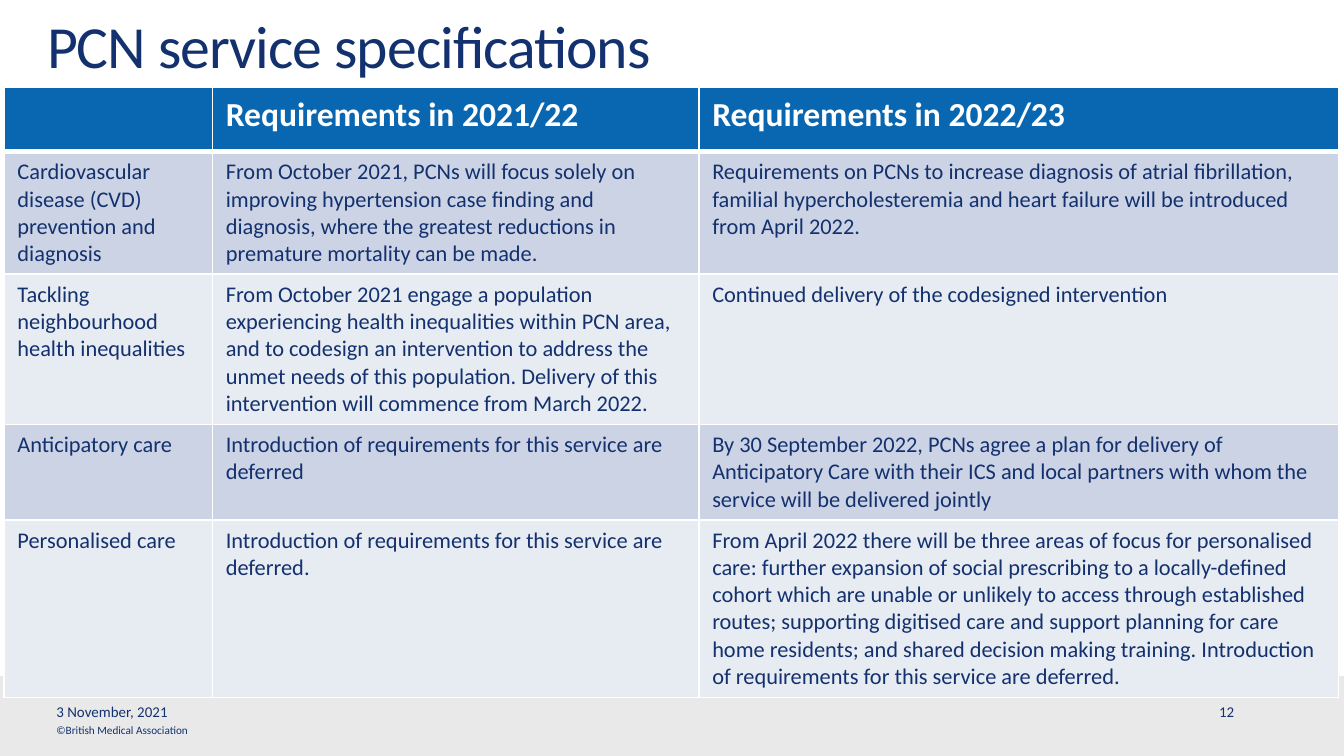
from lxml import etree
from pptx import Presentation
from pptx.dml.color import RGBColor
from pptx.enum.shapes import MSO_SHAPE
from pptx.enum.text import MSO_ANCHOR
from pptx.oxml.ns import qn
from pptx.util import Inches, Pt

RECTANGLE = MSO_SHAPE.RECTANGLE
TOP, MIDDLE = MSO_ANCHOR.TOP, MSO_ANCHOR.MIDDLE

NAVY = RGBColor(0x13, 0x31, 0x6E)
BLUE = RGBColor(0x09, 0x67, 0xB1)
WHITE = RGBColor(0xFF, 0xFF, 0xFF)
GREY = RGBColor(0xE9, 0xE9, 0xE9)
DARK_BAND = RGBColor(0xCC, 0xD3, 0xE4)
LIGHT_BAND = RGBColor(0xE7, 0xEB, 0xF2)

COLUMN_WIDTHS = [1.55, 3.62, 4.76]
ROW_HEIGHTS = [0.48, 0.91, 1.12, 0.71, 1.32]
ROWS = [
    ["", "Requirements in 2021/22", "Requirements in 2022/23"],
    [
        "Cardiovascular disease (CVD) prevention and diagnosis",
        "From October 2021, PCNs will focus solely on improving hypertension case "
        "finding and diagnosis, where the greatest reductions in premature mortality "
        "can be made.",
        "Requirements on PCNs to increase diagnosis of atrial fibrillation, familial "
        "hypercholesteremia and heart failure will be introduced from April 2022.",
    ],
    [
        "Tackling neighbourhood health inequalities",
        "From October 2021 engage a population experiencing health inequalities within "
        "PCN area, and to codesign an intervention to address the unmet needs of this "
        "population. Delivery of this intervention will commence from March 2022.",
        "Continued delivery of the codesigned intervention",
    ],
    [
        "Anticipatory care",
        "Introduction of requirements for this service are deferred",
        "By 30 September 2022, PCNs agree a plan for delivery of Anticipatory Care with "
        "their ICS and local partners with whom the service will be delivered jointly",
    ],
    [
        "Personalised care",
        "Introduction of requirements for this service are deferred.",
        "From April 2022 there will be three areas of focus for personalised care: "
        "further expansion of social prescribing to a locally-defined cohort which are "
        "unable or unlikely to access through established routes; supporting digitised "
        "care and support planning for care home residents; and shared decision making "
        "training. Introduction of requirements for this service are deferred.",
    ],
]


def write(frame, text, size, color=NAVY, bold=False):
    """Put one formatted run in the frame's first paragraph and return it."""
    span = frame.paragraphs[0].add_run()
    span.text = text
    font_format = {"name": "Calibri", "size": Pt(size), "bold": bold}
    for name, value in font_format.items():
        setattr(span.font, name, value)
    span.font.color.rgb = color
    return span


def add_borders(cell, bottom_width):
    properties = cell._tc.get_or_add_tcPr()
    widths = {"a:lnL": 1, "a:lnR": 1, "a:lnT": 1, "a:lnB": bottom_width}
    for position, (tag, width) in enumerate(widths.items()):
        line = etree.Element(qn(tag), w=str(Pt(width)))
        fill = etree.SubElement(line, qn("a:solidFill"))
        etree.SubElement(fill, qn("a:srgbClr"), val=str(WHITE))
        properties.insert(position, line)


# Widescreen page, 16:9
deck = Presentation()
deck.slide_width = Inches(10)
deck.slide_height = Inches(10) * 9 // 16
page = deck.slides.add_slide(deck.slide_layouts[6])

# Footer band, down to the bottom edge
band_top = Inches(5.03)
band = page.shapes.add_shape(
    RECTANGLE, Inches(0), band_top, deck.slide_width, deck.slide_height - band_top
)
band.shadow.inherit = False
band.fill.solid()
band.fill.fore_color.rgb = GREY
band.line.fill.background()

# Title and footer texts
LABELS = [
    ("©British Medical Association", 6, MIDDLE, (0.42, 5.38, 2.07, 0.1)),
    ("PCN service specifications", 32, TOP, (0.35, 0.13, 7.72, 0.42)),
    ("3 November, 2021", 8, MIDDLE, (0.42, 5.23, 3.17, 0.13)),
    ("12", 8, MIDDLE, (9.07, 5.23, 0.28, 0.13)),
]
for text, size, anchor, place in LABELS:
    box = page.shapes.add_textbox(*[Inches(length) for length in place])
    frame_format = {
        "word_wrap": True, "vertical_anchor": anchor,
        "margin_left": 0, "margin_top": 0, "margin_right": 0, "margin_bottom": 0,
    }
    for name, value in frame_format.items():
        setattr(box.text_frame, name, value)
    span = write(box.text_frame, text, size)
    if size == 32:
        box.text_frame.paragraphs[0].line_spacing = Pt(34)
        span.font._element.set("spc", "-50")

# Requirements table
table = page.shapes.add_table(
    len(ROWS), len(COLUMN_WIDTHS), Inches(0.03), Inches(0.65),
    Inches(sum(COLUMN_WIDTHS)), Inches(sum(ROW_HEIGHTS)),
).table
for column, width in zip(table.columns, COLUMN_WIDTHS):
    column.width = Inches(width)
for row, height in zip(table.rows, ROW_HEIGHTS):
    row.height = Inches(height)

for row_index, texts in enumerate(ROWS):
    header = row_index == 0
    row_fill = BLUE if header else DARK_BAND if row_index % 2 else LIGHT_BAND
    for column_index, text in enumerate(texts):
        cell = table.cell(row_index, column_index)
        cell.fill.solid()
        cell.fill.fore_color.rgb = row_fill
        add_borders(cell, 3 if header else 1)
        if text:
            write(cell.text_frame, text, 18 if header else 12,
                  WHITE if header else NAVY, header)

deck.save("out.pptx")
